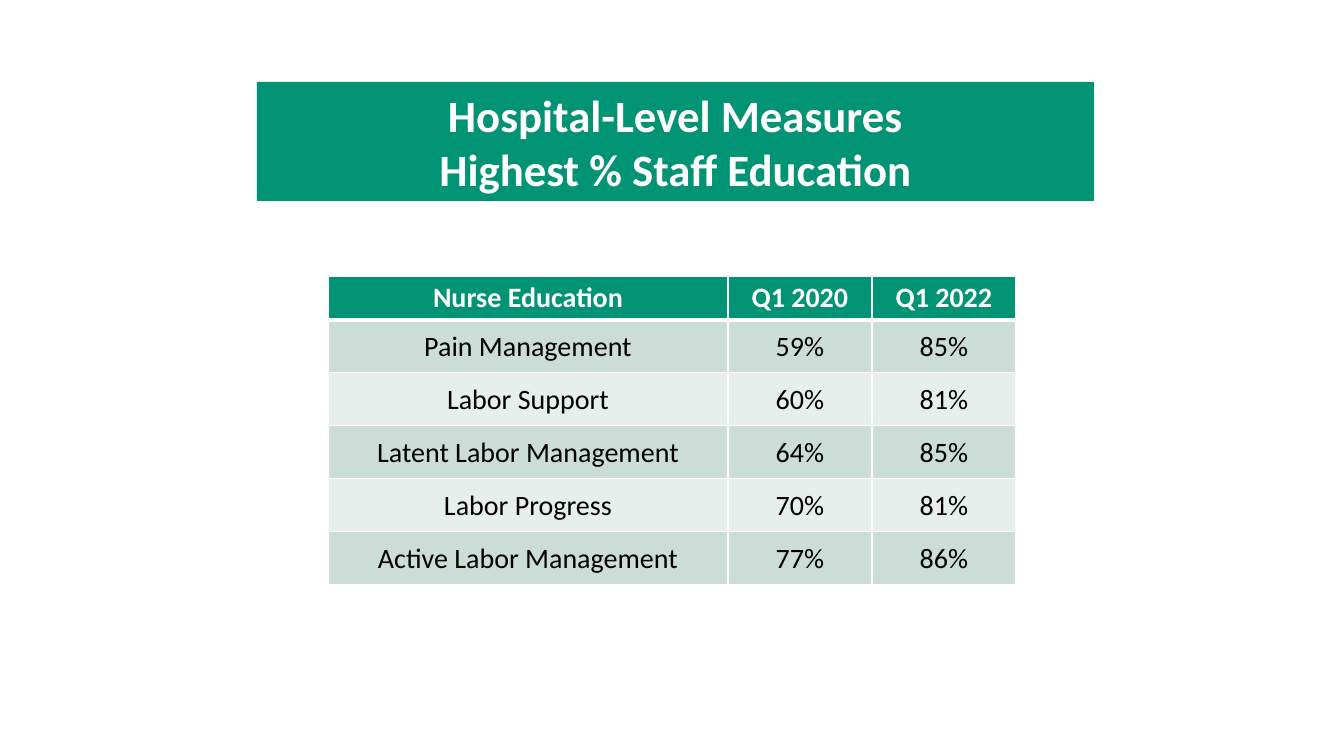
import pptx
import pptx.dml.color
import pptx.enum.shapes
import pptx.enum.text
import pptx.oxml
import pptx.oxml.ns
import pptx.util

EMU_PER_PX = 914400 / 100.8
GREEN, WHITE, BLACK = "009374", "FFFFFF", "000000"
BANDS = ("CCDCD6", "E7EEEB")


def px(length):
    return pptx.util.Emu(round(length * EMU_PER_PX))


def colour(code):
    return pptx.dml.color.RGBColor.from_string(code)


class SlideBuilder:
    font = "Calibri"

    def __init__(self, slide):
        self.slide = slide

    def style(self, para, text, size, code, bold):
        para.text = text
        para.alignment = pptx.enum.text.PP_ALIGN.CENTER
        para.font.name = self.font
        para.font.size = pptx.util.Pt(size)
        para.font.bold = bold
        para.font.color.rgb = colour(code)

    def banner(self, left, top, width, height, lines):
        box = self.slide.shapes.add_shape(
            pptx.enum.shapes.MSO_SHAPE.RECTANGLE, px(left), px(top), px(width), px(height))
        box.shadow.inherit = False
        box.fill.solid()
        box.fill.fore_color.rgb = colour(GREEN)
        box.line.fill.background()
        frame = box.text_frame
        frame.word_wrap = True
        frame.auto_size = pptx.enum.text.MSO_AUTO_SIZE.SHAPE_TO_FIT_TEXT
        for index, line in enumerate(lines):
            para = frame.add_paragraph() if index else frame.paragraphs[0]
            self.style(para, line, 32, WHITE, True)

    def border(self, cell, side, points):
        namespace = pptx.oxml.ns.nsdecls("a")
        cell._tc.get_or_add_tcPr().append(pptx.oxml.parse_xml(
            f'<a:ln{side} {namespace} w="{pptx.util.Pt(points)}"><a:solidFill>'
            f'<a:srgbClr val="{WHITE}"/></a:solidFill></a:ln{side}>'))

    def cell(self, cell, text, row):
        header = row == 0
        for side in "LRTB":
            thick = (header and side == "B") or (row == 1 and side == "T")
            self.border(cell, side, 3 if thick else 1)
        cell.fill.solid()
        cell.fill.fore_color.rgb = colour(GREEN if header else BANDS[(row - 1) % 2])
        if not header:
            cell.vertical_anchor = pptx.enum.text.MSO_ANCHOR.MIDDLE
            cell.margin_left = cell.margin_right = cell.margin_top = px(1)
            cell.margin_bottom = 0
        self.style(cell.text_frame.paragraphs[0], text, 20, WHITE if header else BLACK, header)

    def table(self, left, top, widths, heights, rows):
        table = self.slide.shapes.add_table(
            len(rows), len(widths), px(left), px(top), px(sum(widths)), px(sum(heights))).table
        for column, width in zip(table.columns, widths):
            column.width = px(width)
        for row, (height, texts) in enumerate(zip(heights, rows)):
            table.rows[row].height = px(height)
            for column, text in enumerate(texts):
                self.cell(table.cell(row, column), text, row)


def main():
    deck = pptx.Presentation()
    deck.slide_width, deck.slide_height = px(1344), px(756)
    page = SlideBuilder(deck.slides.add_slide(deck.slide_layouts[6]))

    # Title banner
    page.banner(257, 82, 837, 119, ["Hospital-Level Measures", "Highest % Staff Education"])

    # Education measures
    measures = [
        ("Nurse Education", "Q1 2020", "Q1 2022"),
        ("Pain Management", "59%", "85%"),
        ("Labor Support", "60%", "81%"),
        ("Latent Labor Management", "64%", "85%"),
        ("Labor Progress", "70%", "81%"),
        ("Active Labor Management", "77%", "86%"),
    ]
    page.table(328, 276, [400, 144, 144], [40] + [53] * 5, measures)

    deck.save("out.pptx")


if __name__ == "__main__":
    main()
